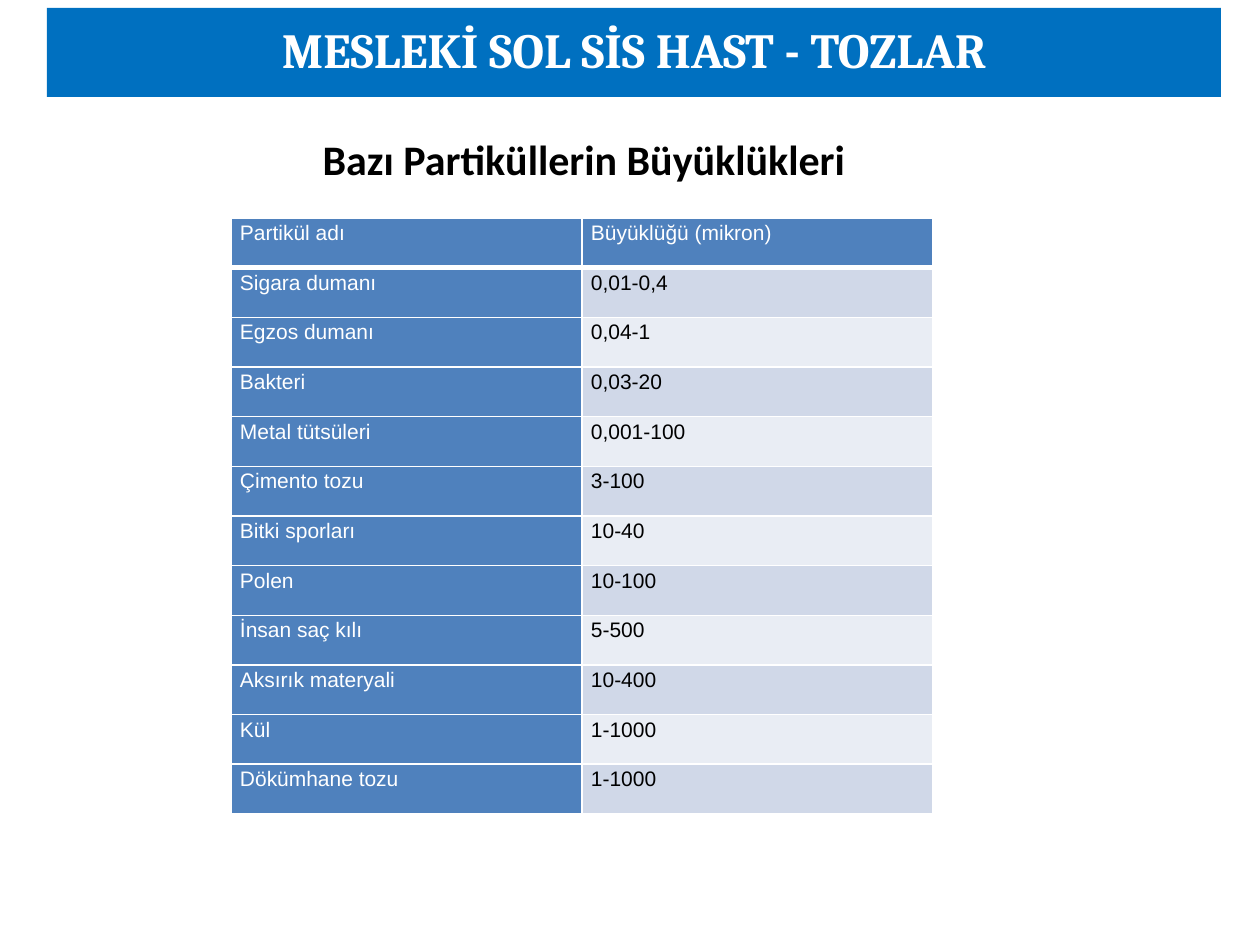
"""Build a slide with a table of particle sizes under a title band."""
from lxml.etree import SubElement
from pptx import Presentation
from pptx.dml.color import RGBColor
from pptx.enum.shapes import MSO_SHAPE as Shape
from pptx.enum.text import MSO_ANCHOR as Anchor, PP_ALIGN as Align
from pptx.oxml.ns import qn
from pptx.util import Emu, Pt

WHITE, BLACK = "FFFFFF", "000000"
BAND, HEADER, DARK_ROW, LIGHT_ROW = "0070C0", "4F81BD", "D0D8E8", "E9EDF4"
ROWS = [
    ("Partikül adı", "Büyüklüğü (mikron)"),
    ("Sigara dumanı", "0,01-0,4"),
    ("Egzos dumanı", "0,04-1"),
    ("Bakteri", "0,03-20"),
    ("Metal tütsüleri", "0,001-100"),
    ("Çimento tozu", "3-100"),
    ("Bitki sporları", "10-40"),
    ("Polen", "10-100"),
    ("İnsan saç kılı", "5-500"),
    ("Aksırık materyali", "10-400"),
    ("Kül", "1-1000"),
    ("Dökümhane tozu", "1-1000"),
]


def px(length):
    return Emu(round(length * 914400 / 126))


def write(frame, text, font, size, color, align, spacing=1.0, bold=False):
    frame.text = text
    paragraph = frame.paragraphs[0]
    paragraph.alignment = align
    paragraph.line_spacing = spacing
    span = paragraph.runs[0]
    span.font.name = font
    span.font.size = Pt(size)
    span.font.bold = bold
    span.font.color.rgb = RGBColor.from_string(color)


deck = Presentation()
deck.slide_width, deck.slide_height = px(1260), px(945)
page = deck.slides.add_slide(deck.slide_layouts[6])

table = page.shapes.add_table(
    len(ROWS), 2, px(231), px(218), px(702), px(596)
).table
for column in table.columns:
    column.width = px(351)
for row_index, texts in enumerate(ROWS):
    table.rows[row_index].height = Emu(px(596) // len(ROWS))
    for column_index, text in enumerate(texts):
        cell = table.cell(row_index, column_index)
        cell.margin_left = cell.margin_right = px(9)
        cell.margin_top = cell.margin_bottom = 0
        is_heading = row_index == 0 or column_index == 0
        write(cell.text_frame, text, "Arial", 12,
              WHITE if is_heading else BLACK, Align.JUSTIFY, 1.15)

        properties = cell._tc.get_or_add_tcPr()
        for side in ("L", "R", "T", "B"):
            width = 3 if row_index == 0 and side == "B" else 1
            border = SubElement(properties, qn(f"a:ln{side}"), w=str(Pt(width)))
            fill = SubElement(border, qn("a:solidFill"))
            SubElement(fill, qn("a:srgbClr"), val=WHITE)

        stripe = DARK_ROW if row_index % 2 else LIGHT_ROW
        cell.fill.solid()
        cell.fill.fore_color.rgb = RGBColor.from_string(HEADER if is_heading else stripe)

subtitle = page.shapes.add_textbox(px(281), px(127), px(606), px(63))
subtitle.text_frame.word_wrap = True
subtitle.text_frame.vertical_anchor = Anchor.MIDDLE
write(subtitle.text_frame, "Bazı Partiküllerin Büyüklükleri", "Calibri", 24,
      BLACK, Align.CENTER, bold=True)

title = page.shapes.add_shape(Shape.RECTANGLE, px(47), px(8), px(1174), px(89))
title.shadow.inherit = False
title.fill.solid()
title.fill.fore_color.rgb = RGBColor.from_string(BAND)
title.line.fill.background()
title.text_frame.margin_left = title.text_frame.margin_right = 0
title.text_frame.vertical_anchor = Anchor.MIDDLE
write(title.text_frame, "MESLEKİ SOL SİS HAST - TOZLAR", "Cambria", 28,
      WHITE, Align.CENTER, 0.9, bold=True)

deck.save("out.pptx")
